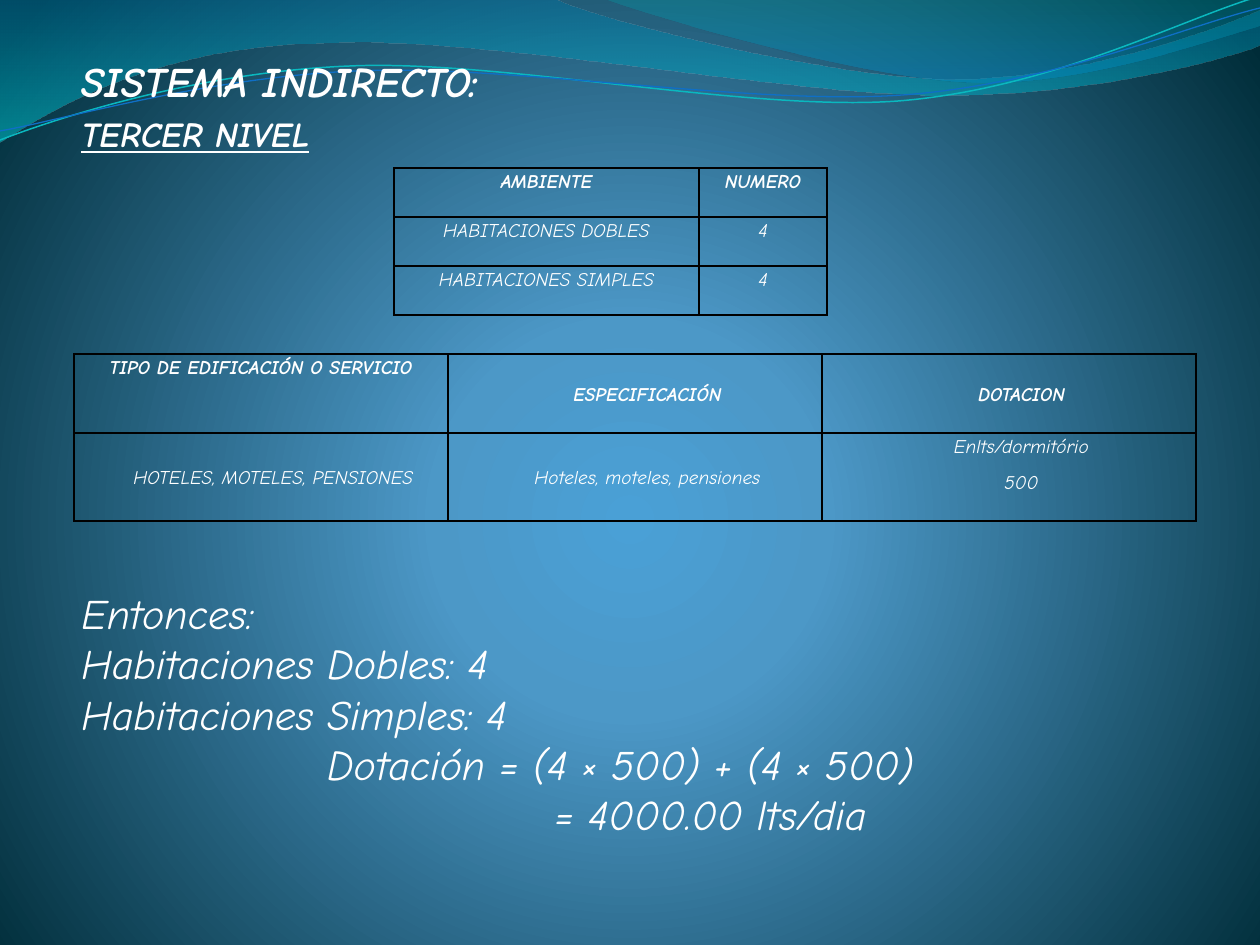
from lxml import etree
from pptx import Presentation
from pptx import util as u
from pptx.dml.color import RGBColor
from pptx.enum import text
from pptx.oxml import ns

PX = 914400 / 126
FONT = "Comic Neue"
WHITE = RGBColor(0xFF, 0xFF, 0xFF)
BLACK = RGBColor(0x00, 0x00, 0x00)
GLOW = RGBColor(0x4A, 0xA0, 0xD6)
MID_BLUE = RGBColor(0x4C, 0x98, 0xC7)
DEEP = RGBColor(0x00, 0x2C, 0x38)
OCEAN = RGBColor(0x00, 0x74, 0xA1)
AQUA = RGBColor(0x00, 0xC6, 0xCF)
TEAL = RGBColor(0x00, 0xA1, 0xA9)
SKY = RGBColor(0x00, 0x8B, 0xBF)
TURQUOISE = RGBColor(0x0A, 0xB8, 0xBF)
ROYAL = RGBColor(0x0F, 0x6F, 0xC6)

CENTER = text.PP_ALIGN.CENTER
TOP, MIDDLE = text.MSO_ANCHOR.TOP, text.MSO_ANCHOR.MIDDLE


def px(n):
    """Turn pixels into EMU."""
    return u.Emu(round(n * PX))


def sub(parent, tag, **attrs):
    """Append a DrawingML child with the given attributes."""
    e = etree.SubElement(parent, ns.qn(tag))
    for name, value in attrs.items():
        e.set(name, str(value))
    return e


def set_gradient(fill, owner, stops, radial=False):
    """Give a fill its (position, colour, opacity) stops, top-down or radial."""
    fill.gradient()
    grad = owner.find(".//" + ns.qn("a:gradFill"))
    for child in list(grad):
        grad.remove(child)
    gs_list = sub(grad, "a:gsLst")
    for pos, color, alpha in stops:
        clr = sub(sub(gs_list, "a:gs", pos=pos * 1000), "a:srgbClr", val=color)
        if alpha < 100:
            sub(clr, "a:alpha", val=alpha * 1000)
    if radial:
        route = sub(grad, "a:path", path="circle")
        sub(route, "a:fillToRect", l=10000, t=110000, r=10000, b=100000)
    else:
        sub(grad, "a:lin", ang=5400000, scaled=1)


def add_curve(s, start, segments, closed):
    """Draw a freeform whose segments have one (line) or three (Bezier) points."""
    pts = [(px(x), px(y)) for seg in segments for x, y in seg]
    builder = s.shapes.build_freeform(*map(px, start))
    builder.add_line_segments(pts, close=closed)
    sp = builder.convert_to_shape()
    sp.shadow.inherit = False
    steps = iter(list(sp._element.iter(ns.qn("a:lnTo"))))
    for seg in segments:
        first = next(steps)
        if len(seg) == 3:
            first.tag = ns.qn("a:cubicBezTo")
            for step in (next(steps), next(steps)):
                first.append(step[0])
                step.getparent().remove(step)
    return sp


def add_wave(s, start, segments, stops):
    """Add a translucent filled wave."""
    sp = add_curve(s, start, segments, True)
    sp.line.fill.background()
    set_gradient(sp.fill, sp._element.spPr, stops)


def add_ripple(s, start, segments, color, width):
    """Add a thin open curve."""
    sp = add_curve(s, start, segments, False)
    sp.fill.background()
    sp.line.color.rgb = color
    sp.line.width = u.Pt(width)


def style(p, size, bold=False, underline=False, align=None, indent=0):
    """Format one paragraph and its runs."""
    p.alignment = align
    if indent:
        p._p.get_or_add_pPr().set("marL", str(px(indent)))
    for r in p.runs:
        f = r.font
        f.name, f.size, f.color.rgb = FONT, u.Pt(size), WHITE
        f.bold, f.italic, f.underline = bold, True, underline


def add_text(s, box, lines):
    """Add a wrapped text box of (text, format) lines."""
    tf = s.shapes.add_textbox(*map(px, box)).text_frame
    tf.word_wrap = True
    tf.text = "\n".join(line for line, _ in lines)
    for p, (_, fmt) in zip(tf.paragraphs, lines):
        style(p, **fmt)
    return tf


def add_borders(cell):
    """Draw thin black lines on all four sides of a cell."""
    tc_pr = cell._tc.get_or_add_tcPr()
    for i, side in enumerate(("a:lnL", "a:lnR", "a:lnT", "a:lnB")):
        ln = sub(tc_pr, side, w=u.Pt(1))
        sub(sub(ln, "a:solidFill"), "a:srgbClr", val=BLACK)
        tc_pr.insert(i, ln)


def add_grid(s, left, top, cols, rows, cells):
    """Add a bordered table of (text, anchor, indent, space after) cells."""
    box = (left, top, sum(cols), sum(rows))
    table = s.shapes.add_table(len(rows), len(cols), *map(px, box)).table
    table.first_row = table.horz_banding = False
    for col, width in zip(table.columns, cols):
        col.width = px(width)
    for i, (row, height) in enumerate(zip(table.rows, rows)):
        row.height = px(height)
        for cell, (label, anchor, indent, after) in zip(row.cells, cells[i]):
            cell.margin_left = cell.margin_right = px(9)
            cell.margin_top = cell.margin_bottom = 0
            cell.vertical_anchor = anchor
            cell.fill.background()
            add_borders(cell)
            cell.text_frame.text = label
            for p in cell.text_frame.paragraphs:
                style(p, 11, bold=i == 0, align=CENTER, indent=indent)
                p.line_spacing = 1.15
                p.space_after = u.Pt(after)


def add_backdrop(s):
    """Paint the radial background, the waves and the ripples."""
    set_gradient(s.background.fill, s._element,
                 [(0, GLOW, 100), (25, MID_BLUE, 100), (100, DEEP, 100)], radial=True)
    add_wave(s, (0, 0), [
        [(554, -1)],
        [(600, 21), (837, 79), (955, 79)], [(1075, 79), (1207, 33), (1260, 11)],
        [(1261, 45)],
        [(1239, 55), (1096, 96), (940, 95)], [(784, 95), (481, 35), (324, 43)],
        [(163, 45), (58, 105), (-1, 142)], [(0, 0)]], [(0, OCEAN, 45), (100, AQUA, 55)])
    add_wave(s, (604, -1), [
        [(641, 14), (859, 78), (969, 82)], [(1079, 87), (1211, 40), (1260, 26)],
        [(1260, 0)], [(604, -1)]], [(0, TEAL, 30), (80, SKY, 45)])
    add_ripple(s, (0, 140), [
        [(60, 117), (199, 72), (349, 66)], [(498, 59), (747, 112), (898, 101)],
        [(1050, 89), (1182, 19), (1257, -3)]], TURQUOISE, 0.85)
    add_ripple(s, (0, 131), [
        [(59, 121), (207, 77), (357, 71)], [(508, 64), (751, 106), (903, 95)],
        [(1053, 84), (1186, 26), (1260, 8)]], ROYAL, 0.75)


def main():
    """Build and save the slide."""
    prs = Presentation()
    prs.slide_width, prs.slide_height = px(1260), px(945)
    s = prs.slides.add_slide(prs.slide_layouts[6])
    add_backdrop(s)
    heading = add_text(s, (69, 49, 1134, 118), [
        ("SISTEMA INDIRECTO:", dict(size=24, bold=True)),
        ("TERCER NIVEL", dict(size=20, bold=True, underline=True))])
    for p, before in zip(heading.paragraphs, (4.8, 4)):
        p.space_before = u.Pt(before)
    rooms = [("AMBIENTE", "NUMERO"), ("HABITACIONES DOBLES", "4"),
             ("HABITACIONES SIMPLES", "4")]
    add_grid(s, 394, 168, [305, 128], [49] * 3,
             [[(label, TOP, 0, 0) for label in row] for row in rooms])
    add_grid(s, 74, 354, [374] * 3, [79, 88], [
        [("TIPO DE EDIFICACIÓN O SERVICIO", TOP, 0, 0),
         ("ESPECIFICACIÓN", MIDDLE, 25, 0), ("DOTACION", MIDDLE, 25, 0)],
        [("HOTELES, MOTELES, PENSIONES", MIDDLE, 25, 0),
         ("Hoteles, moteles, pensiones", MIDDLE, 25, 0),
         ("Enlts/dormitório\n500", TOP, 25, 6)]])
    add_text(s, (69, 581, 1103, 286), [
        ("Entonces:", dict(size=24)),
        ("Habitaciones Dobles: 4", dict(size=24)),
        ("Habitaciones Simples: 4", dict(size=24)),
        ("Dotación = (4 × 500) + (4 × 500)", dict(size=24, align=CENTER)),
        ("= 4000.00 lts/dia", dict(size=24, align=CENTER, indent=180))])
    prs.save("out.pptx")


if __name__ == "__main__":
    main()
